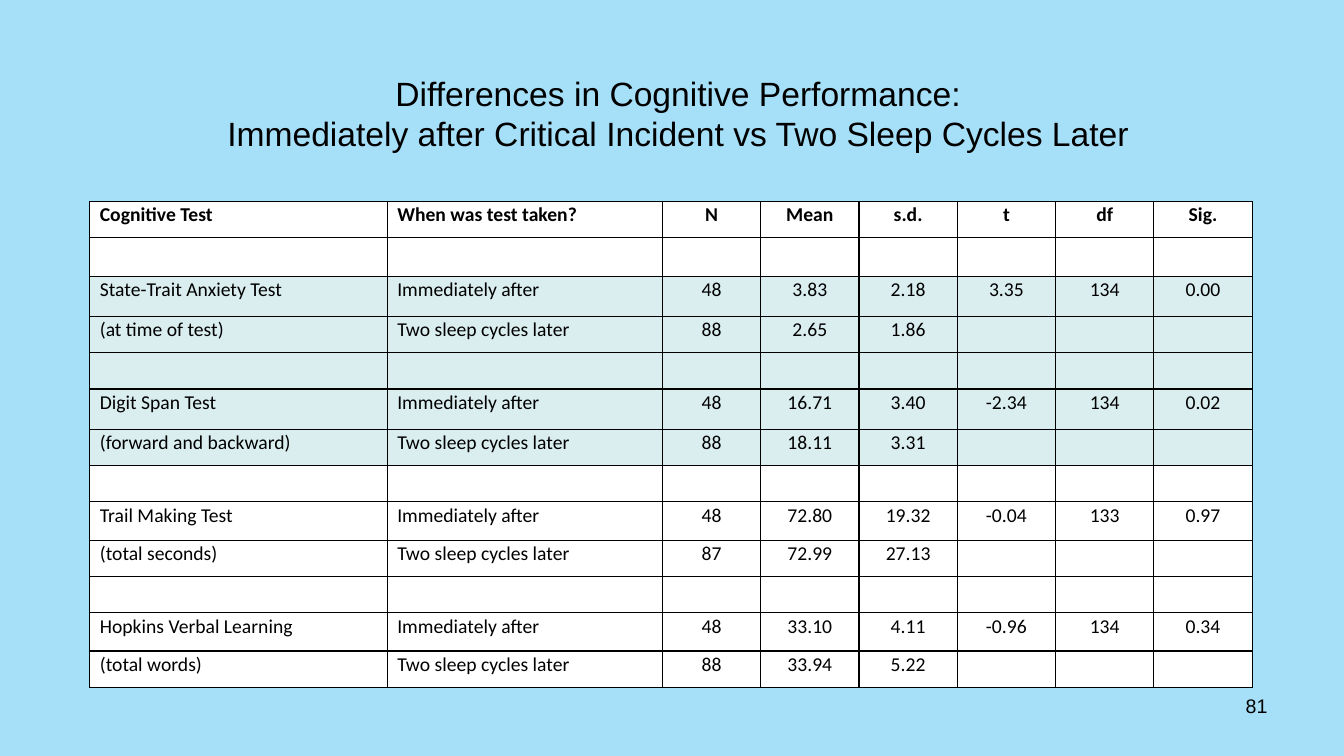
from copy import deepcopy
from lxml import etree
from pptx import Presentation, util as u
from pptx.dml import color
from pptx.enum import text
from pptx.oxml import ns

Inches = u.Inches
HUES = {"sky": "A6DFF8", "ink": "000000", "plain": "FFFFFF", "tint": "DAEDEF"}
LEFT, MID, RIGHT = text.PP_ALIGN.LEFT, text.PP_ALIGN.CENTER, text.PP_ALIGN.RIGHT


def put(frame, words, size=14, face="Calibri", bold=False, align=LEFT, space=None):
    para = frame.paragraphs[0]
    para.text = words
    para.alignment = align
    para.line_spacing = space
    for run in para.runs:
        run.font.size = u.Pt(size)
        run.font.name = face
        run.font.bold = bold
        run.font.color.rgb = color.RGBColor.from_string(HUES["ink"])
    for br in para._p.findall(ns.qn("a:br")):
        br.append(deepcopy(para.runs[0]._r.rPr))


def edge(cell):
    props = cell._tc.get_or_add_tcPr()
    for spot, side in enumerate(("lnL", "lnR", "lnT", "lnB")):
        line = etree.Element(ns.qn("a:" + side), w="12700")
        fill = etree.SubElement(line, ns.qn("a:solidFill"))
        etree.SubElement(fill, ns.qn("a:srgbClr"), val=HUES["ink"])
        props.insert(spot, line)


deck = Presentation()
deck.slide_width, deck.slide_height = Inches(13.33), Inches(7.5)
slide = deck.slides.add_slide(deck.slide_layouts[5])
back = slide.background.fill
back.solid()
back.fore_color.rgb = color.RGBColor.from_string(HUES["sky"])

title = slide.shapes.title
title.left, title.top = Inches(0.56), Inches(0.5)
title.width, title.height = Inches(12.33), Inches(1.25)
title.text_frame.vertical_anchor = text.MSO_ANCHOR.MIDDLE
put(title.text_frame, "Differences in Cognitive Performance:\vImmediately after Critical Incident vs Two Sleep Cycles Later",
    size=24, face="Arial", align=MID)

page = slide.shapes.add_textbox(Inches(9.56), Inches(6.83), Inches(3.11), Inches(0.52))
page.text_frame.word_wrap = True
put(page.text_frame, "81", face="Arial", align=RIGHT)

head = ["Cognitive Test", "When was test taken?", "N", "Mean", "s.d.", "t", "df", "Sig."]
tests = [
    ("State-Trait Anxiety Test", "(at time of test)",
     ["48", "3.83", "2.18", "3.35", "134", "0.00"], ["88", "2.65", "1.86"]),
    ("Digit Span Test", "(forward and backward)",
     ["48", "16.71", "3.40", "-2.34", "134", "0.02"], ["88", "18.11", "3.31"]),
    ("Trail Making Test", "(total seconds)",
     ["48", "72.80", "19.32", "-0.04", "133", "0.97"], ["87", "72.99", "27.13"]),
    ("Hopkins Verbal Learning", "(total words)",
     ["48", "33.10", "4.11", "-0.96", "134", "0.34"], ["88", "33.94", "5.22"]),
]
rows = [head]
for name, note, first, later in tests:
    rows += [[], [name, "Immediately after"] + first, [note, "Two sleep cycles later"] + later]

wides = [2.95, 2.73] + [0.975] * 6
highs = [0.36, 0.38, 0.4, 0.36, 0.36, 0.4, 0.36, 0.36, 0.38, 0.36, 0.36, 0.38, 0.36]
grid = slide.shapes.add_table(len(rows), len(head), Inches(0.89), Inches(2),
                              Inches(11.53), Inches(4.83)).table
for col, wide in zip(grid.columns, wides):
    col.width = Inches(wide)
for row, high in zip(grid.rows, highs):
    row.height = Inches(high)

for r, row in enumerate(rows):
    for c in range(len(head)):
        cell = grid.cell(r, c)
        cell.margin_left = cell.margin_right = Inches(0.1)
        cell.margin_top = cell.margin_bottom = 0
        cell.fill.solid()
        cell.fill.fore_color.rgb = color.RGBColor.from_string(HUES["tint" if 2 <= r <= 6 else "plain"])
        edge(cell)
        if c < len(row):
            put(cell.text_frame, row[c], bold=r == 0, align=MID if c > 1 else LEFT, space=1.07)

deck.save("out.pptx")
